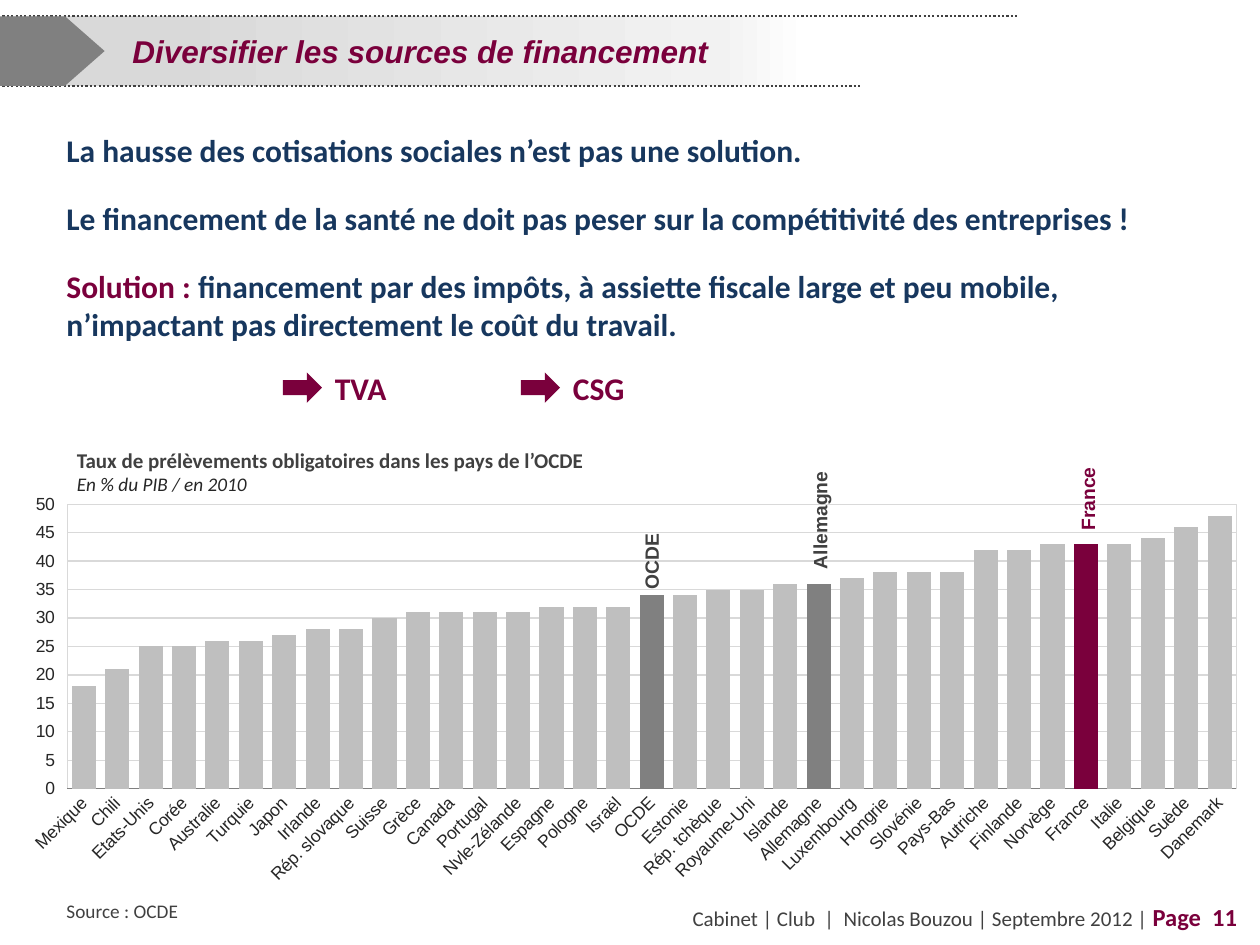
from copy import deepcopy

from lxml import etree
from pptx import Presentation
from pptx.chart.data import CategoryChartData
from pptx.dml.color import RGBColor
from pptx.enum import chart as ch, dml, shapes, text
from pptx.oxml import parse_xml
from pptx.oxml.ns import nsdecls, qn
from pptx.util import Cm, Pt

PLUM = RGBColor(0x7A, 0x00, 0x3C)
NAVY = RGBColor(0x17, 0x37, 0x5E)
DARK = RGBColor(0x40, 0x40, 0x40)
INK = RGBColor(0x26, 0x26, 0x26)
GREY = RGBColor(0x80, 0x80, 0x80)
SILVER = RGBColor(0xBF, 0xBF, 0xBF)
PALE = RGBColor(0xD9, 0xD9, 0xD9)
MIST = RGBColor(0xF2, 0xF2, 0xF2)
WHITE = RGBColor(0xFF, 0xFF, 0xFF)

TITLE = dict(name="Arial", size=Pt(18), bold=True, italic=True, color=PLUM)
BODY = dict(name="Calibri", size=Pt(18), bold=True, color=NAVY)
ACCENT = {**BODY, "color": PLUM}
NOTE = dict(name="Calibri", size=Pt(11), color=DARK)
FOOTER = {**NOTE, "size": Pt(12)}
PAGE = {**ACCENT, "size": Pt(14)}
HEADING = {**FOOTER, "bold": True}
UNIT = {**NOTE, "italic": True, "color": INK}
CALLOUT = dict(name="Arial", size=Pt(11), bold=True, color=DARK)

# (left, top, width, height) in cm, paragraphs of (text, format) spans, options
TEXTS = [
    ((7.11, 18.06, 18.08, 0.99),
     [[("Cabinet | Club  |  Nicolas Bouzou | Septembre 2012 | ", FOOTER),
       ("Page  11", PAGE)]], dict(align=text.PP_ALIGN.RIGHT)),
    ((1.09, 2.51, 23.01, 1.19),
     [[("La hausse des cotisations sociales n’est pas une solution.", BODY)],
      [("Le financement de la santé ne doit pas peser sur la compétitivité "
        "des entreprises !", BODY)],
      [("Solution : ", ACCENT),
       ("financement par des impôts, à assiette fiscale large et peu mobile, "
        "n’impactant pas directement le coût du travail.", BODY)]], dict(gap=17.5)),
    ((1.09, 18.01, 5, 0.74), [[("Source : OCDE", NOTE)]], {}),
    ((1.3, 8.89, 12.8, 1.24),
     [[("Taux de prélèvements obligatoires dans les pays de l’OCDE", HEADING)],
      [("En % du PIB / en 2010", UNIT)]], {}),
    ((20.83, 9.47, 2.21, 0.74), [[("France", {**CALLOUT, "color": PLUM})]], dict(turn=270)),
    ((15.24, 10.06, 2.59, 0.74), [[("Allemagne", CALLOUT)]], dict(turn=270)),
    ((12.24, 10.87, 1.8, 0.74), [[("OCDE", CALLOUT)]], dict(turn=270)),
    ((6.5, 7.32, 2.01, 0.99), [[("TVA", ACCENT)]], {}),
    ((11.3, 7.32, 1.6, 0.99), [[("CSG", ACCENT)]], {}),
]
ARROW_LEFTS = [5.79, 10.59]
BAND_TOP, BAND_HEIGHT = 0.33, 1.4
BAND_STOPS = [(14, PALE), (62, MIST), (70, WHITE)]
RULES = [(BAND_TOP, 20.55), (BAND_TOP + BAND_HEIGHT, 17.35)]

RATES = [
    ("Mexique", 18), ("Chili", 21), ("Etats-Unis", 25), ("Corée", 25),
    ("Australie", 26), ("Turquie", 26), ("Japon", 27), ("Irlande", 28),
    ("Rép. slovaque", 28), ("Suisse", 30), ("Grèce", 31), ("Canada", 31),
    ("Portugal", 31), ("Nvle-Zélande", 31), ("Espagne", 32), ("Pologne", 32),
    ("Israël", 32), ("OCDE", 34), ("Estonie", 34), ("Rép. tchèque", 35),
    ("Royaume-Uni", 35), ("Islande", 36), ("Allemagne", 36), ("Luxembourg", 37),
    ("Hongrie", 38), ("Slovénie", 38), ("Pays-Bas", 38), ("Autriche", 42),
    ("Finlande", 42), ("Norvège", 43), ("France", 43), ("Italie", 43),
    ("Belgique", 44), ("Suède", 46), ("Danemark", 48),
]
HIGHLIGHTS = {"OCDE": GREY, "Allemagne": GREY, "France": PLUM}
PLOT_LAYOUT = dict(x=0.042, y=0.028, w=0.939, h=0.682)


def set_font(font, values):
    for key, value in values.items():
        if key == "color":
            font.color.rgb = value
        else:
            setattr(font, key, value)


def write(frame, paragraphs, align=None, gap=0):
    frame.word_wrap = True
    for index, spans in enumerate(paragraphs):
        para = frame.add_paragraph() if index else frame.paragraphs[0]
        para.alignment = align or text.PP_ALIGN.LEFT
        if index and gap:
            para.space_before = Pt(gap)
        for words, values in spans:
            span = para.add_run()
            span.text = words
            set_font(span.font, values)


def add_text(page, place, paragraphs, turn=0, **options):
    box = page.shapes.add_textbox(*map(Cm, place))
    box.rotation = turn
    write(box.text_frame, paragraphs, **options)


def add_plain(page, kind, place, color=None):
    """Add a preset shape without outline or shadow."""
    shape = page.shapes.add_shape(kind, *map(Cm, place))
    shape.shadow.inherit = False
    shape.line.fill.background()
    if color is not None:
        shape.fill.solid()
        shape.fill.fore_color.rgb = color
    return shape


def add_header(page):
    band = add_plain(page, shapes.MSO_SHAPE.RECTANGLE, (0.05, BAND_TOP, 23.24, BAND_HEIGHT))
    band.fill.gradient()
    band.fill.gradient_angle = 0
    stop_list = band.fill._fill._gradFill.find(qn("a:gsLst"))
    stop_list.append(deepcopy(stop_list[-1]))
    for stop, (percent, color) in zip(band.fill.gradient_stops, BAND_STOPS):
        stop.position = percent / 100
        stop.color.rgb = color
    frame = band.text_frame
    frame.margin_left = Cm(2.62)
    frame.vertical_anchor = text.MSO_ANCHOR.MIDDLE
    write(frame, [[("Diversifier les sources de financement", TITLE)]])

    for top, right in RULES:
        rule = page.shapes.add_connector(
            shapes.MSO_CONNECTOR.STRAIGHT, Cm(0.05), Cm(top), Cm(right), Cm(top))
        rule.line.color.rgb = DARK
        rule.line.width = Pt(1.25)
        rule.line.dash_style = dml.MSO_LINE.ROUND_DOT
        etree.SubElement(rule._element.spPr, qn("a:effectLst"))

    tab = add_plain(page, shapes.MSO_SHAPE.PENTAGON, (0, BAND_TOP, 2.11, BAND_HEIGHT), GREY)
    tab.adjustments[0] = 0.57


def frame_plot(chart):
    """Fix the inner plot position and give it a pale outline."""
    area = chart._chartSpace.chart.plotArea
    for old in area.findall(qn("c:layout")):
        area.remove(old)
    modes = "".join(f'<c:{axis}Mode val="edge"/>' for axis in "xy")
    sizes = "".join(f'<c:{key} val="{value}"/>' for key, value in PLOT_LAYOUT.items())
    area.insert(0, parse_xml(
        f'<c:layout {nsdecls("c")}><c:manualLayout><c:layoutTarget val="inner"/>'
        f'{modes}{sizes}</c:manualLayout></c:layout>'))
    area.append(parse_xml(
        f'<c:spPr {nsdecls("c", "a")}><a:noFill/><a:ln w="9525"><a:solidFill>'
        f'<a:srgbClr val="{PALE}"/></a:solidFill></a:ln></c:spPr>'))


def add_rates_chart(page):
    data = CategoryChartData()
    data.categories = [country for country, _ in RATES]
    data.add_series("Series 1", [rate for _, rate in RATES])
    chart = page.shapes.add_chart(
        ch.XL_CHART_TYPE.COLUMN_CLUSTERED, Cm(0.3), Cm(9.93), Cm(25.1), Cm(8.41), data).chart
    chart.has_legend = chart.has_title = False
    set_font(chart.font, dict(name="Arial", size=Pt(10), color=INK))

    plot = chart.plots[0]
    plot.gap_width = 39
    plot.vary_by_categories = False
    series = plot.series[0]
    series.format.fill.solid()
    series.format.fill.fore_color.rgb = SILVER
    for index, (country, _) in enumerate(RATES):
        if country in HIGHLIGHTS:
            fill = series.points[index].format.fill
            fill.solid()
            fill.fore_color.rgb = HIGHLIGHTS[country]

    countries = chart.category_axis
    countries.major_tick_mark = ch.XL_TICK_MARK.NONE
    countries.format.line.color.rgb = GREY
    countries.tick_labels.font.size = Pt(10)
    countries._element.find(qn("c:txPr")).find(qn("a:bodyPr")).set("rot", "-2700000")

    scale = chart.value_axis
    scale.minimum_scale, scale.maximum_scale, scale.major_unit = 0, 50, 5
    scale.major_tick_mark = ch.XL_TICK_MARK.OUTSIDE
    scale.format.line.fill.background()
    scale.tick_labels.number_format = "#,##0"
    scale.tick_labels.number_format_is_linked = False
    scale.major_gridlines.format.line.color.rgb = PALE
    scale.major_gridlines.format.line.width = Pt(0.75)
    frame_plot(chart)


def main():
    deck = Presentation()
    deck.slide_width, deck.slide_height = Cm(25.4), Cm(19.05)
    page = deck.slides.add_slide(deck.slide_layouts[6])
    add_header(page)
    add_rates_chart(page)
    for place, paragraphs, options in TEXTS:
        add_text(page, place, paragraphs, **options)
    for left in ARROW_LEFTS:
        arrow = add_plain(page, shapes.MSO_SHAPE.UP_ARROW, (left, 7.42, 0.61, 0.79), PLUM)
        arrow.rotation = 90
    deck.save("out.pptx")


if __name__ == "__main__":
    main()
